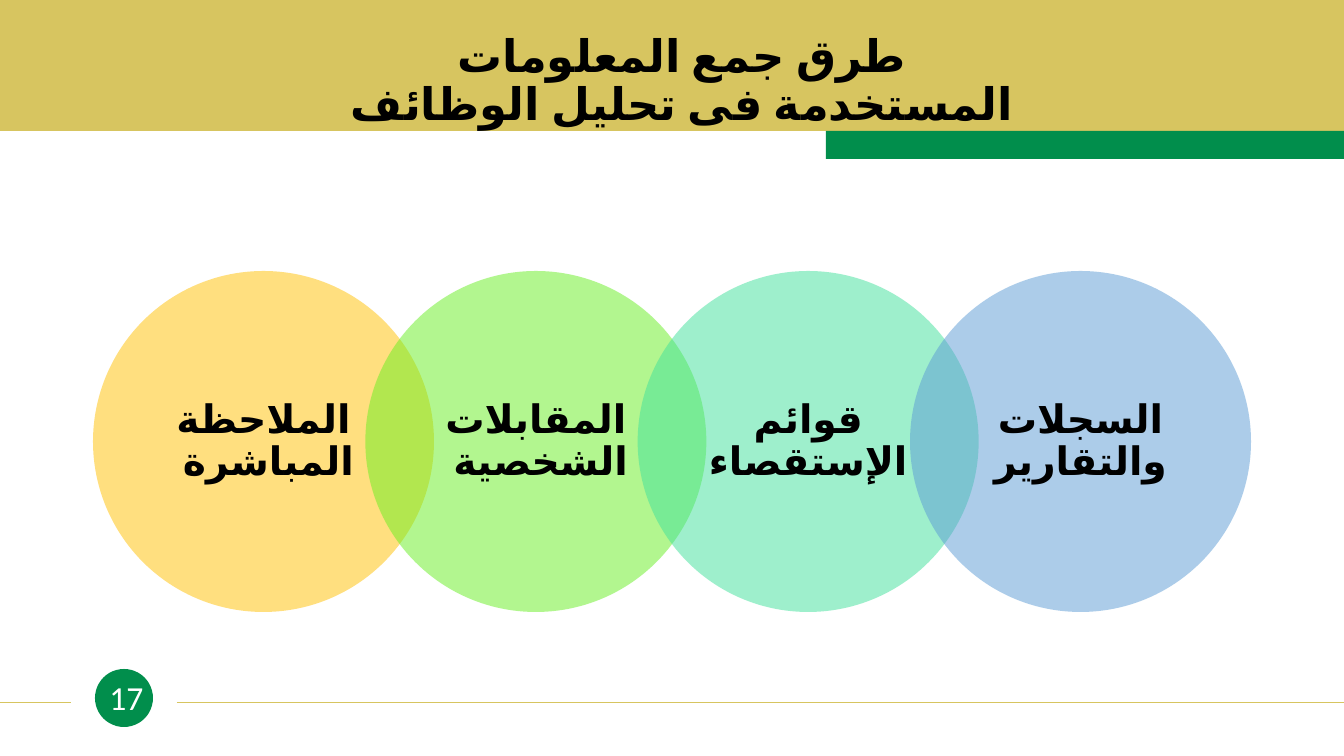
from lxml import etree
from pptx import Presentation
from pptx import util as u
from pptx.dml.color import RGBColor
from pptx.enum import lang, shapes, text
from pptx.oxml.ns import qn

PX = 914400 / 100.8
WIDTH, HEIGHT = 1344, 756

GOLD = RGBColor(0xD7, 0xC5, 0x60)
GREEN = RGBColor(0x01, 0x8E, 0x4C)
BLACK = RGBColor(0x00, 0x00, 0x00)
WHITE = RGBColor(0xFF, 0xFF, 0xFF)
AMBER = RGBColor(0xFF, 0xC0, 0x00)
LIME = RGBColor(0x67, 0xEF, 0x21)
MINT = RGBColor(0x3F, 0xE1, 0x9B)
BLUE = RGBColor(0x5B, 0x9B, 0xD5)

TITLE = "طرق جمع المعلومات المستخدمة فى تحليل الوظائف"
METHODS = [
    ("الملاحظة المباشرة ", AMBER),
    ("المقابلات الشخصية ", LIME),
    ("قوائم الإستقصاء", MINT),
    ("السجلات والتقارير", BLUE),
]


def px(length):
    return u.Emu(round(length * PX))


def write(shape, words, size, font="Roboto", color=BLACK, bold=True,
          rtl=True, insets=(10, 5, 10, 5)):
    """Fill the shape with one centred paragraph; insets are left, top, right, bottom."""
    frame = shape.text_frame
    frame.word_wrap = True
    frame.auto_size = text.MSO_AUTO_SIZE.NONE
    frame.vertical_anchor = text.MSO_ANCHOR.MIDDLE
    (frame.margin_left, frame.margin_top,
     frame.margin_right, frame.margin_bottom) = map(px, insets)
    paragraph = frame.paragraphs[0]
    paragraph.alignment = text.PP_ALIGN.CENTER
    paragraph.line_spacing = 0.9
    run = paragraph.add_run()
    run.text = words
    run.font.name = font
    run.font.size = u.Pt(size)
    run.font.bold = bold
    run.font.color.rgb = color
    if rtl:
        paragraph._p.get_or_add_pPr().set("rtl", "1")
        run.font.language_id = lang.MSO_LANGUAGE_ID.ARABIC_EGYPT
        etree.SubElement(run.font._element, qn("a:cs"), typeface=font)


def add_filled(slide, preset, box, color, alpha=None):
    shape = slide.shapes.add_shape(preset, *map(px, box))
    shape.shadow.inherit = False
    shape.fill.solid()
    shape.fill.fore_color.rgb = color
    shape.line.fill.background()
    if alpha is not None:
        value = shape.fill._xPr.find(".//" + qn("a:srgbClr"))
        etree.SubElement(value, qn("a:alpha"), val=str(alpha * 1000))
    return shape


def add_rule(slide, start, end, y):
    rule = slide.shapes.add_connector(
        shapes.MSO_CONNECTOR.STRAIGHT, px(start), px(y), px(end), px(y))
    rule.line.color.rgb = GOLD
    rule.line.width = u.Pt(0.5)
    etree.SubElement(rule._element.spPr, qn("a:effectLst"))


def add_header(slide, left, top, width, height):
    rectangle = shapes.MSO_SHAPE.RECTANGLE
    accent_width = 518
    add_filled(slide, rectangle, (left, top, width, height), GOLD)
    add_filled(slide, rectangle,
               (left + width - accent_width, top + height, accent_width, 28), GREEN)
    title = slide.shapes.title
    title.left, title.top = px(left + 332), px(top + 44)
    title.width, title.height = px(700), px(76)
    write(title, TITLE, 32)
    # The title placeholder comes first in the tree, so lift it above the band.
    slide.shapes.element.append(title.element)


def add_methods(slide, left, top, width, diameter):
    """Spread overlapping circles evenly over the width."""
    step = (width - diameter) / (len(METHODS) - 1)
    for index, (label, color) in enumerate(METHODS):
        circle = add_filled(slide, shapes.MSO_SHAPE.OVAL,
                            (left + index * step, top, diameter, diameter),
                            color, alpha=50)
        write(circle, label, 28, insets=(19, 4, 19, 4))


def add_footer(slide, left, top, width, diameter):
    badge_left = left + 95
    rule_y = top + 33
    badge = add_filled(slide, shapes.MSO_SHAPE.OVAL,
                       (badge_left, top, diameter, diameter), GREEN)
    write(badge, "17", 24, font="Calibri", color=WHITE, bold=False,
          rtl=False, insets=(5, 4, 0, 0))
    add_rule(slide, left, badge_left - 24, rule_y)
    add_rule(slide, badge_left + diameter + 24, left + width, rule_y)


def main():
    presentation = Presentation()
    presentation.slide_width, presentation.slide_height = px(WIDTH), px(HEIGHT)
    slide = presentation.slides.add_slide(presentation.slide_layouts[5])
    add_header(slide, 0, 0, WIDTH, 131)
    add_footer(slide, 0, 669, WIDTH, 58)
    add_methods(slide, 93, 271, 1158, 341)
    presentation.save("out.pptx")


if __name__ == "__main__":
    main()
